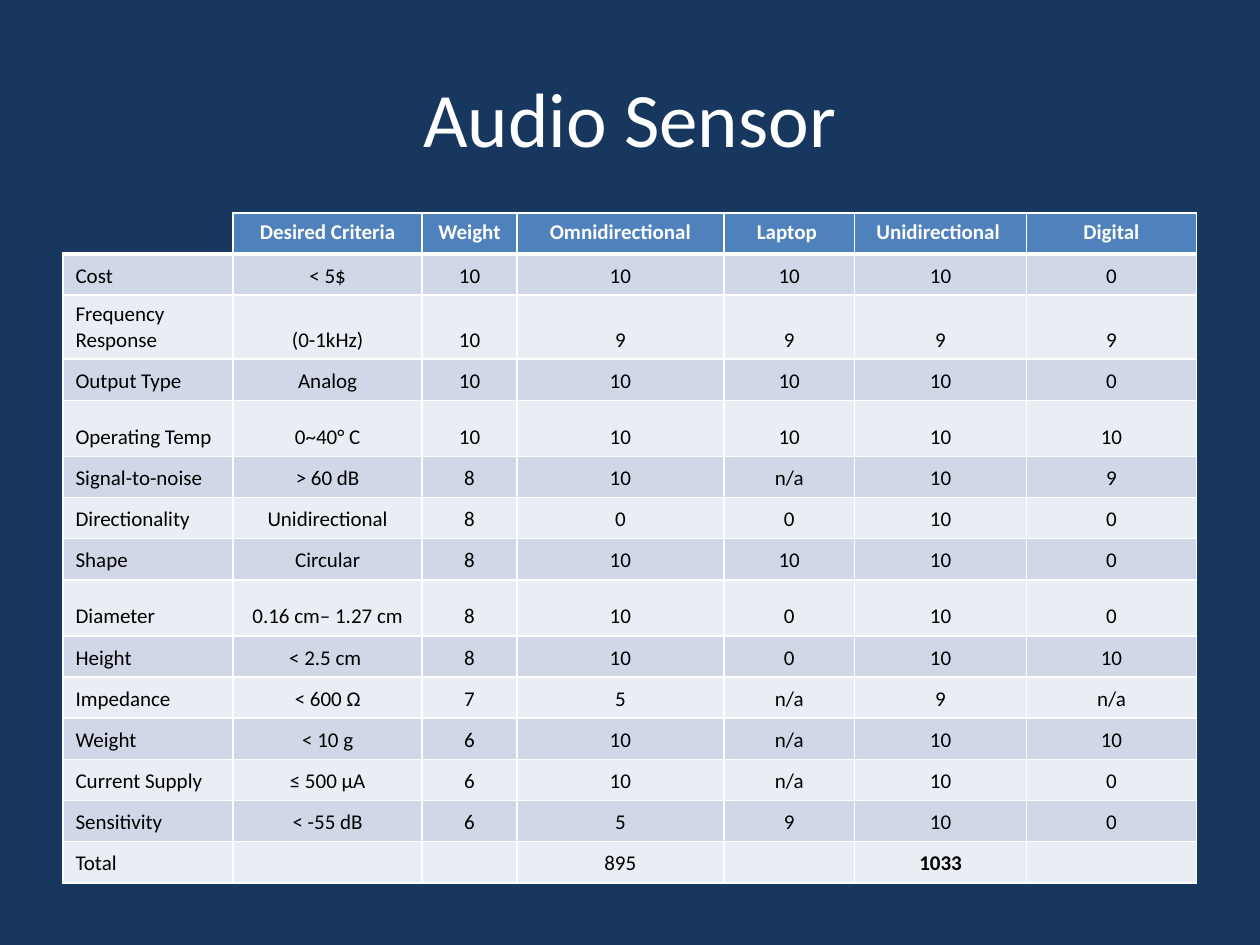
from lxml import etree
from pptx import Presentation
from pptx import util as u
from pptx.dml.color import RGBColor
from pptx.enum import text
from pptx.oxml.ns import qn

COLORS = {
    "background": "17375E",
    "header": "4F81BD",
    "odd": "D0D8E8",
    "even": "E9EDF4",
    "white": "FFFFFF",
    "black": "000000",
}
FONT = "Calibri"

HEADER = ["", "Desired Criteria", "Weight", "Omnidirectional", "Laptop ", "Unidirectional ", "Digital"]
CRITERIA = [
    ["Cost", "< 5$", "10", "10", "10", "10", "0"],
    ["Frequency Response", "(0-1kHz)", "10", "9", "9", "9", "9"],
    ["Output Type", "Analog", "10", "10", "10", "10", "0"],
    ["Operating Temp", "0~40° C", "10", "10", "10", "10", "10"],
    ["Signal-to-noise", "> 60 dB", "8", "10", "n/a", "10", "9"],
    ["Directionality", "Unidirectional", "8", "0", "0", "10", "0"],
    ["Shape", "Circular", "8", "10", "10", "10", "0"],
    ["Diameter", "0.16 cm– 1.27 cm", "8", "10", "0", "10", "0"],
    ["Height", "< 2.5 cm ", "8", "10", "0", "10", "10"],
    ["Impedance", "< 600 Ω", "7", "5", "n/a", "9", "n/a"],
    ["Weight", "< 10 g", "6", "10", "n/a", "10", "10"],
    ["Current Supply", "≤ 500 μA", "6", "10", "n/a", "10", "0"],
    ["Sensitivity", "< -55 dB", "6", "5", "9", "10", "0"],
    ["Total", "", "", "895", "", "1033", ""],
]
ROWS = [HEADER] + CRITERIA
COLUMN_WIDTHS = [3.43, 3.81, 1.91, 4.17, 2.64, 3.46, 3.43]
ROW_HEIGHT = 0.83
TALL_ROWS = {"Frequency Response": 1.29, "Operating Temp": 1.13, "Diameter": 1.13}


def style_span(span, size, color, bold=False):
    span.font.name = FONT
    span.font.size = u.Pt(size)
    span.font.bold = bold
    span.font.color.rgb = RGBColor.from_string(COLORS[color])


def add_border(cell, side, width):
    """Draw one cell edge in white; a width of 0 hides it."""
    properties = cell._tc.get_or_add_tcPr()
    line = etree.SubElement(properties, qn(f"a:ln{side}"), w=str(u.Pt(width)))
    if width:
        fill = etree.SubElement(line, qn("a:solidFill"))
        etree.SubElement(fill, qn("a:srgbClr"), val=COLORS["white"])
    else:
        etree.SubElement(line, qn("a:noFill"))


# Page and background
deck = Presentation()
deck.slide_width, deck.slide_height = u.Cm(25.4), u.Cm(19.05)
page = deck.slides.add_slide(deck.slide_layouts[5])
page.background.fill.solid()
page.background.fill.fore_color.rgb = RGBColor.from_string(COLORS["background"])

# Title
title = page.shapes.title
title.left, title.top, title.width, title.height = u.Cm(1.27), u.Cm(0.76), u.Cm(22.86), u.Cm(3.18)
title.text_frame.text = "Audio Sensor"
title.text_frame.vertical_anchor = text.MSO_ANCHOR.MIDDLE
para = title.text_frame.paragraphs[0]
para.alignment = text.PP_ALIGN.CENTER
style_span(para.runs[0], 44, "white")

# Table grid
heights = [TALL_ROWS.get(values[0], ROW_HEIGHT) for values in ROWS]
table = page.shapes.add_table(
    len(ROWS), len(HEADER), u.Cm(1.27), u.Cm(4.29),
    u.Cm(sum(COLUMN_WIDTHS)), u.Cm(sum(heights)),
).table
table.horz_banding = False
for column, width in zip(table.columns, COLUMN_WIDTHS):
    column.width = u.Cm(width)
for row, height in zip(table.rows, heights):
    row.height = u.Cm(height)

# Cells
for r, values in enumerate(ROWS):
    is_header = r == 0
    band = "header" if is_header else "odd" if r % 2 else "even"
    for c, value in enumerate(values):
        cell = table.cell(r, c)
        is_corner = is_header and c == 0

        # Borders come before the fill; a heavy line sits under the header
        edges = {
            "L": 0 if is_corner else 1,
            "R": 1,
            "T": 0 if is_corner else 3 if r == 1 else 1,
            "B": 3 if is_header else 1,
        }
        for side, width in edges.items():
            add_border(cell, side, width)
        if is_corner:
            cell.fill.background()
        else:
            cell.fill.solid()
            cell.fill.fore_color.rgb = RGBColor.from_string(COLORS[band])

        cell.text_frame.text = value
        cell.vertical_anchor = text.MSO_ANCHOR.TOP if is_header else text.MSO_ANCHOR.BOTTOM
        para = cell.text_frame.paragraphs[0]
        para.alignment = text.PP_ALIGN.CENTER if c else text.PP_ALIGN.LEFT
        for span in para.runs:
            style_span(span, 12, "white" if is_header else "black", is_header or value == "1033")
        if not value:
            # Keeps empty cells from stretching their row
            etree.SubElement(para._p, qn("a:endParaRPr"), sz="1200")

deck.save("out.pptx")
